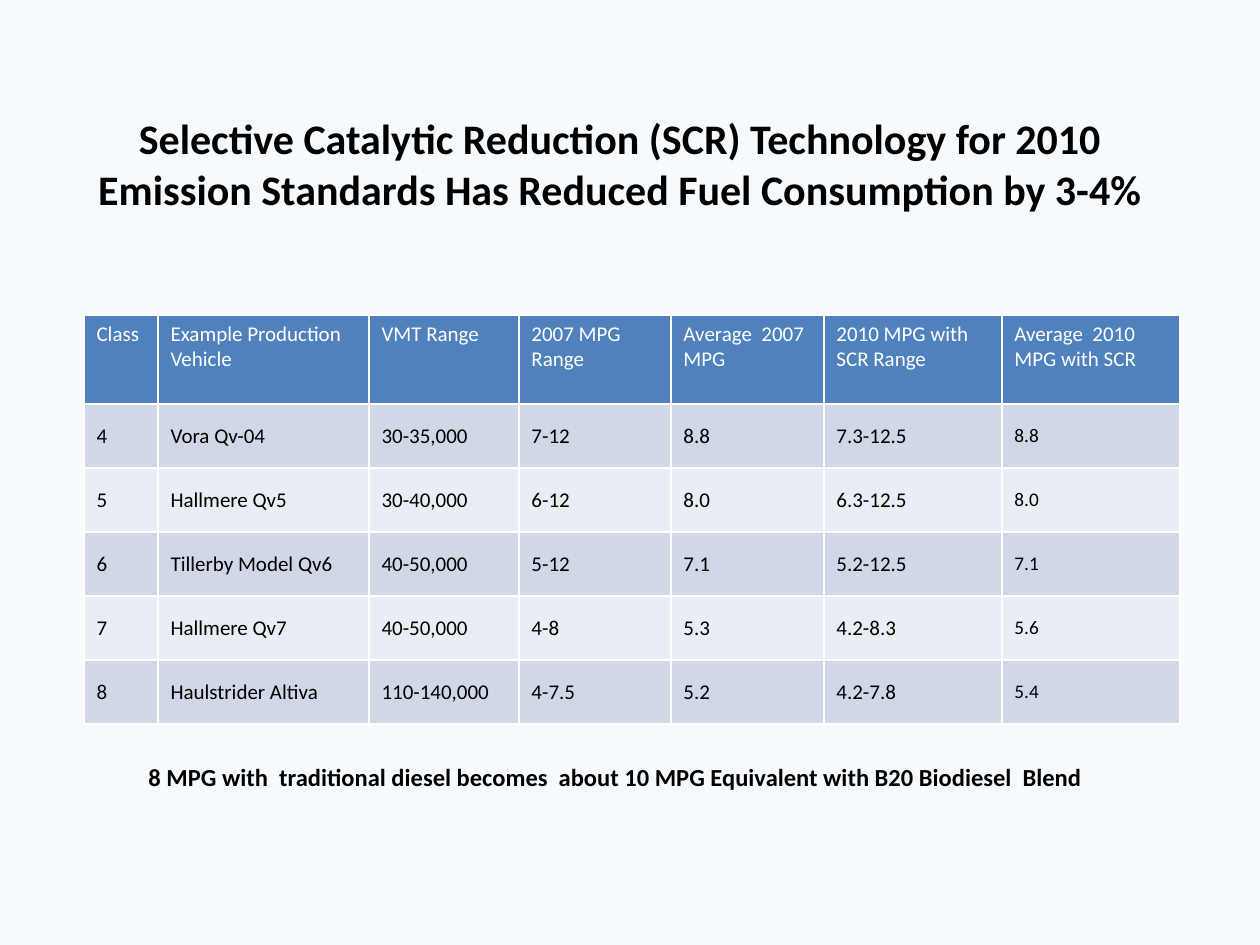
from dataclasses import dataclass

from lxml import etree
from pptx import Presentation
from pptx import util as u
from pptx.dml.color import RGBColor
from pptx.enum import text
from pptx.oxml import ns

PX = u.Inches(1) // 126


@dataclass(frozen=True)
class Theme:
    font: str = "Calibri"
    background: str = "F7FAFD"
    ink: str = "000000"
    white: str = "FFFFFF"
    header: str = "4F81BD"
    bands: tuple = ("D0D8E8", "E9EDF4")
    title_size: int = 24
    note_size: int = 14
    cell_size: int = 12
    last_column_size: int = 11
    border: int = 1


theme = Theme()


def write(frame, words, size, color=theme.ink, bold=False, align=text.PP_ALIGN.LEFT,
          anchor=text.MSO_ANCHOR.TOP):
    frame.word_wrap = True
    frame.vertical_anchor = anchor
    paragraph = frame.paragraphs[0]
    paragraph.alignment = align
    run = paragraph.add_run()
    run.text = words
    run.font.name = theme.font
    run.font.size = u.Pt(size)
    run.font.bold = bold
    run.font.color.rgb = RGBColor.from_string(color)


def add_borders(cell):
    """Draw a thin white line on all four sides; call before filling the cell."""
    properties = cell._tc.get_or_add_tcPr()
    for side in ("a:lnL", "a:lnR", "a:lnT", "a:lnB"):
        line = etree.SubElement(properties, ns.qn(side), w=str(u.Pt(theme.border)))
        fill = etree.SubElement(line, ns.qn("a:solidFill"))
        etree.SubElement(fill, ns.qn("a:srgbClr"), val=theme.white)


prs = Presentation()
prs.slide_width, prs.slide_height = 1260 * PX, 945 * PX
slide = prs.slides.add_slide(prs.slide_layouts[6])
slide.background.fill.solid()
slide.background.fill.fore_color.rgb = RGBColor.from_string(theme.background)

title = slide.shapes.add_textbox(53 * PX, 84 * PX, 1134 * PX, 158 * PX)
write(title.text_frame,
      "Selective Catalytic Reduction (SCR) Technology for 2010 "
      "Emission Standards Has Reduced Fuel Consumption by 3-4%",
      theme.title_size, bold=True, align=text.PP_ALIGN.CENTER,
      anchor=text.MSO_ANCHOR.MIDDLE)

mileage = [
    ("Class", "Example Production Vehicle", "VMT Range", "2007 MPG Range",
     "Average  2007 MPG", "2010 MPG with SCR Range", "Average  2010 MPG with SCR"),
    ("4", "Vora Q-四".replace("四", "4"), "30-35,000", "7-12", "8.8", "7.3-12.5", "8.8"),
    ("5", "Hallmere Qv5", "30-40,000", "6-12", "8.0", "6.3-12.5", "8.0"),
    ("6", "Tillerby Model Qv6", "40-50,000", "5-12", "7.1", "5.2-12.5", "7.1"),
    ("7", "Hallmere Qv7", "40-50,000", "4-8", "5.3", "4.2-8.3", "5.6"),
    ("8", "Haulstrider Altiva", "110-140,000", "4-7.5", "5.2", "4.2-7.8", "5.4"),
]
mileage[1] = ("4", "Vora Qv-04", *mileage[1][2:])
column_widths = [74, 211, 150, 152, 153, 178, 178]
row_heights = [89] + [64] * 5

table = slide.shapes.add_table(
    len(mileage), len(column_widths), 84 * PX, 315 * PX,
    sum(column_widths) * PX, sum(row_heights) * PX).table
for column, width in zip(table.columns, column_widths):
    column.width = width * PX
for row, height in zip(table.rows, row_heights):
    row.height = height * PX

for r, entries in enumerate(mileage):
    is_header = r == 0
    for c, entry in enumerate(entries):
        cell = table.cell(r, c)
        add_borders(cell)
        cell.fill.solid()
        cell.fill.fore_color.rgb = RGBColor.from_string(
            theme.header if is_header else theme.bands[(r - 1) % 2])
        is_last = c == len(entries) - 1
        write(cell.text_frame, entry,
              theme.last_column_size if is_last and not is_header else theme.cell_size,
              color=theme.white if is_header else theme.ink)
        cell.vertical_anchor = text.MSO_ANCHOR.TOP if is_header else text.MSO_ANCHOR.MIDDLE

biodiesel_note = slide.shapes.add_textbox(136 * PX, 756 * PX, 987 * PX, 43 * PX)
write(biodiesel_note.text_frame,
      "8 MPG with  traditional diesel becomes  about 10 MPG Equivalent with B20 Biodiesel  Blend",
      theme.note_size, bold=True)

prs.save("out.pptx")
